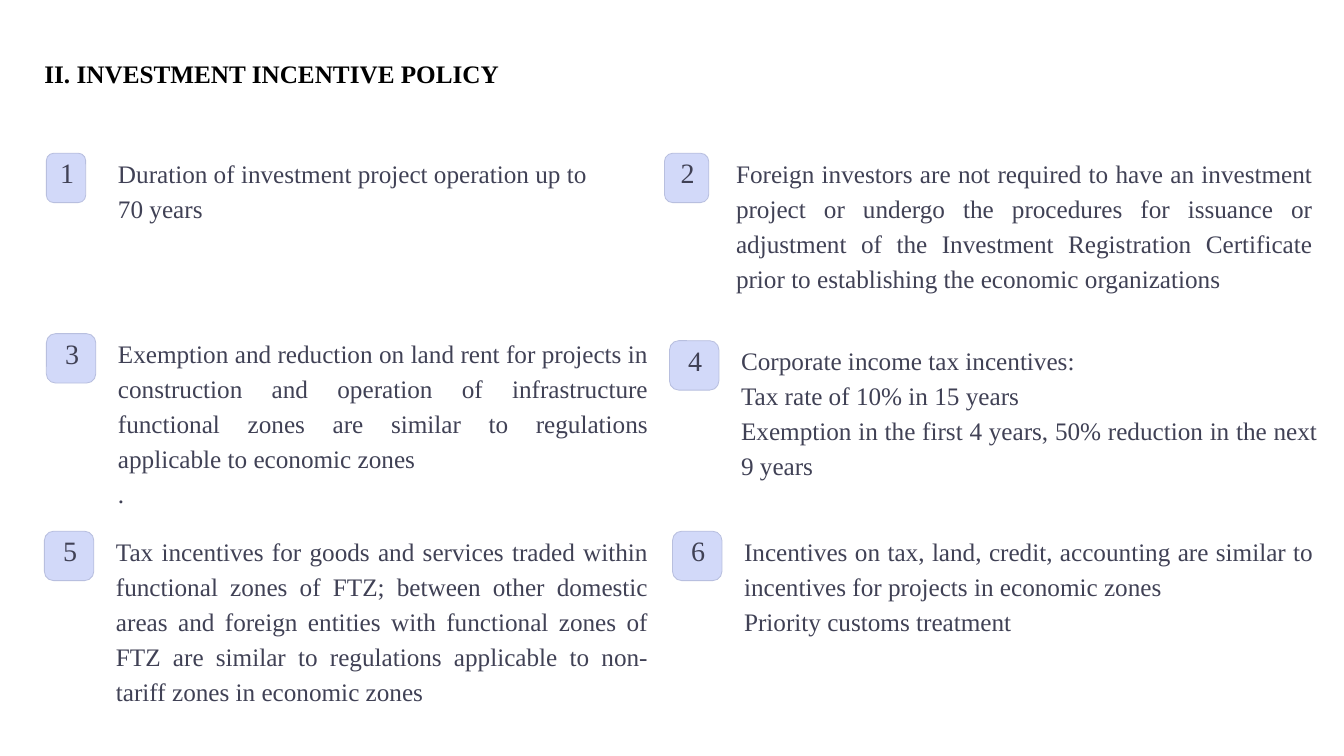
from pptx import Presentation
from pptx import util as u
from pptx.dml.color import RGBColor
from pptx.enum import shapes, text

INK = "404155"
FONT = "Times New Roman"
TEXT_OFFSET = 0.71
LEFT, JUSTIFY, CENTER = text.PP_ALIGN.LEFT, text.PP_ALIGN.JUSTIFY, text.PP_ALIGN.CENTER

# left, top, badge width, text width, alignment, paragraphs
INCENTIVES = [
    (0.46, 1.52, 0.39, 5.15, LEFT,
     ["Duration of investment project operation up to", "70 years"]),
    (6.59, 1.52, 0.44, 5.72, JUSTIFY,
     ["Foreign investors are not required to have an investment project or undergo "
      "the procedures for issuance or adjustment of the Investment Registration "
      "Certificate prior to establishing the economic organizations"]),
    (0.46, 3.31, 0.49, 5.26, JUSTIFY,
     ["Exemption and reduction on land rent for projects in construction and operation "
      "of infrastructure functional zones are similar to regulations applicable to "
      "economic zones", "."]),
    (6.64, 3.38, 0.49, 5.72, JUSTIFY,
     ["Corporate income tax incentives:", "Tax rate of 10% in 15 years",
      "Exemption in the first 4 years, 50% reduction in the next 9 years"]),
    (0.44, 5.27, 0.49, 5.28, JUSTIFY,
     ["Tax incentives for goods and services traded within functional zones of FTZ; "
      "between other domestic areas and foreign entities with functional zones of FTZ "
      "are similar to regulations applicable to non-tariff zones in economic zones"]),
    (6.67, 5.27, 0.49, 5.65, JUSTIFY,
     ["Incentives on tax, land, credit, accounting are similar to incentives for "
      "projects in economic zones", "Priority customs treatment"]),
]


def color(hex_code):
    return RGBColor.from_string(hex_code)


def inches(*lengths):
    return [u.Inches(length) for length in lengths]


def write(sp, paragraphs, size, spacing, align=LEFT, ink=INK, bold=False):
    """Fill a shape with evenly spaced paragraphs, without margins."""
    tf = sp.text_frame
    frame = {"word_wrap": True, "auto_size": text.MSO_AUTO_SIZE.NONE,
             "vertical_anchor": text.MSO_ANCHOR.TOP, "margin_left": 0,
             "margin_top": 0, "margin_right": 0, "margin_bottom": 0}
    for name, value in frame.items():
        setattr(tf, name, value)
    for i, words in enumerate(paragraphs):
        p = tf.add_paragraph() if i else tf.paragraphs[0]
        p.alignment, p.line_spacing = align, u.Pt(spacing)
        r = p.add_run()
        r.text = words
        for name, value in {"name": FONT, "size": u.Pt(size), "bold": bold}.items():
            setattr(r.font, name, value)
        r.font.color.rgb = color(ink)


def add_title(s, left, top, width, height):
    sp = s.shapes.title
    sp.left, sp.top, sp.width, sp.height = inches(left, top, width, height)
    write(sp, ["II. INVESTMENT INCENTIVE POLICY"], 18, 29, ink="000000", bold=True)


def add_badge(s, number, left, top, width, height=0.49):
    sp = s.shapes.add_shape(shapes.MSO_SHAPE.ROUNDED_RECTANGLE,
                            *inches(left, top, width, height))
    sp.adjustments[0] = 0.187
    sp.shadow.inherit = False
    sp.fill.solid()
    sp.fill.fore_color.rgb = color("D2D9F9")
    sp.line.color.rgb = color("B8BFDF")
    sp.line.width = u.Pt(0.6)
    label = s.shapes.add_textbox(
        *inches(left + 0.08, top + 0.04, width - 0.14, height - 0.08))
    write(label, [str(number)], 20, 23, CENTER)


def add_incentive(s, number, left, top, badge_width, text_width, align, paragraphs):
    add_badge(s, number, left, top, badge_width)
    body = s.shapes.add_textbox(*inches(left + TEXT_OFFSET, top, text_width, 1.72))
    write(body, paragraphs, 18, 25, align)


def main():
    prs = Presentation()
    prs.slide_width, prs.slide_height = inches(13.33, 7.5)
    s = prs.slides.add_slide(prs.slide_layouts.get_by_name("Title Only"))
    add_title(s, 0.44, 0.48, 8.78, 0.41)
    for number, incentive in enumerate(INCENTIVES, 1):
        add_incentive(s, number, *incentive)
    prs.save("out.pptx")


if __name__ == "__main__":
    main()
